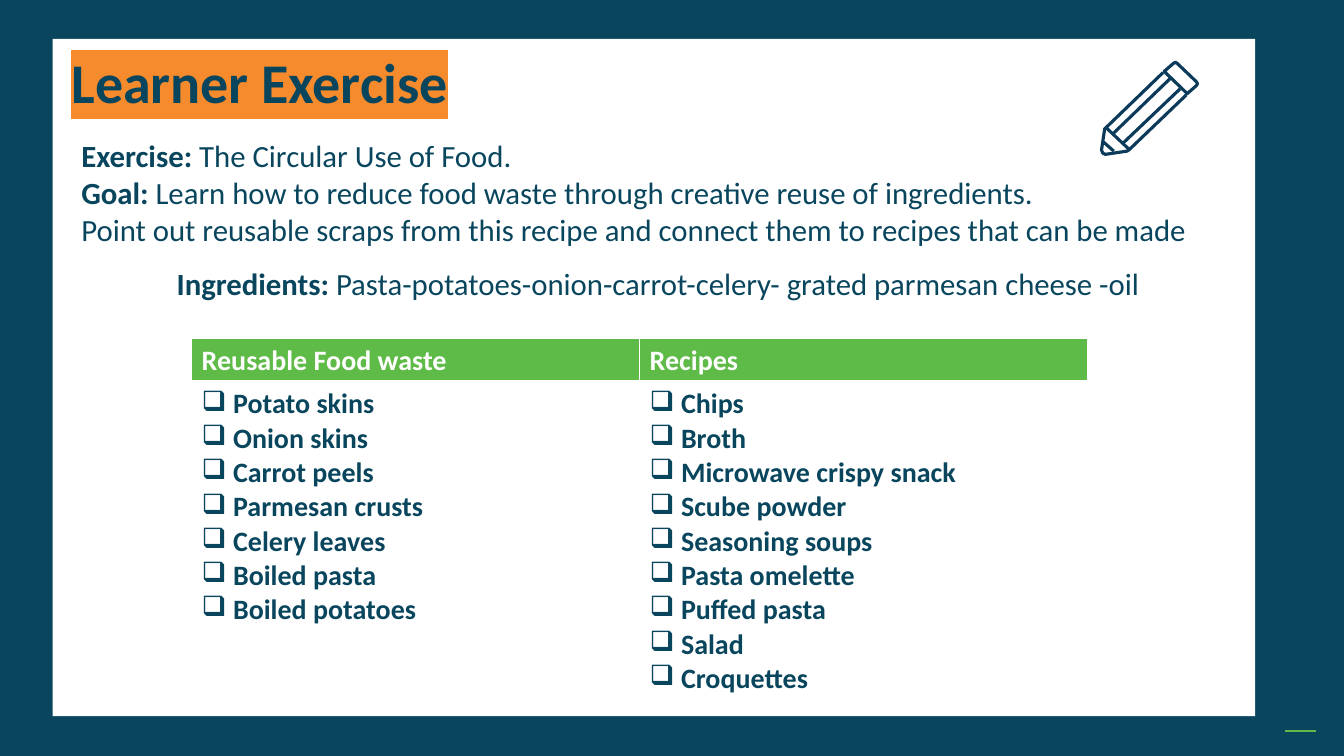
from lxml import etree
from pptx import Presentation
from pptx import util as u
from pptx.dml.color import RGBColor
from pptx.enum import shapes, text
from pptx.oxml import ns

NAVY = RGBColor(0x09, 0x46, 0x5E)
INK = RGBColor(0x0B, 0x3A, 0x5B)
GREEN = RGBColor(0x5F, 0xBB, 0x47)
LINE_GREEN = RGBColor(0x60, 0xBA, 0x47)
ORANGE = RGBColor(0xF6, 0x8B, 0x2D)
WHITE = RGBColor(0xFF, 0xFF, 0xFF)

INTRO = [
    ("Exercise: ", "The Circular Use of Food."),
    ("Goal: ", "Learn how to reduce food waste through creative reuse of ingredients."),
    ("", "Point out reusable scraps from this recipe and connect them to recipes that can be made"),
    ("Ingredients: ", "Pasta-potatoes-onion-carrot-celery- grated parmesan cheese -oil"),
]
COLUMNS = {
    "Reusable Food waste": [
        "Potato skins", "Onion skins", "Carrot peels", "Parmesan crusts",
        "Celery leaves", "Boiled pasta", "Boiled potatoes",
    ],
    "Recipes": [
        "Chips", "Broth", "Microwave crispy snack", "Scube powder", "Seasoning soups",
        "Pasta omelette", "Puffed pasta", "Salad", "Croquettes",
    ],
}
PENCIL_ERASER = [(3015, 206), (2967, 160), (2962, 157), (2957, 160), (2934, 180),
                 (2992, 236), (3015, 216), (3018, 211)]
PENCIL_STROKES = [
    [(2974, 224), (2830, 361)],
    [(2931, 183), (2786, 323), (2784, 325), (2776, 378), (2779, 386),
     (2786, 389), (2840, 381), (2845, 378), (2990, 239)],
    [(2804, 338), (2949, 198)],
    [(2807, 381), (2781, 358)],
    [(2789, 323), (2845, 376)],
]


def add_child(parent, tag, **attributes):
    return etree.SubElement(parent, ns.qn(tag), attributes)


def style_font(paragraph, size, color, bold=False):
    font = paragraph.font
    font.name = "Calibri"
    font.size = u.Pt(size)
    font.bold = bold
    font.color.rgb = color


def add_panel(page, left, top, width, height, color):
    panel = page.shapes.add_shape(
        shapes.MSO_SHAPE.RECTANGLE, u.Cm(left), u.Cm(top), u.Cm(width), u.Cm(height))
    panel.shadow.inherit = False
    panel.fill.solid()
    panel.fill.fore_color.rgb = color
    panel.line.fill.background()


def add_footer_line(page):
    line = page.shapes.add_connector(
        shapes.MSO_CONNECTOR.STRAIGHT, u.Cm(32.39), u.Cm(18.42), u.Cm(33.17), u.Cm(18.42))
    line.line.color.rgb = LINE_GREEN
    line.line.width = u.Pt(1)
    add_child(line._element.spPr, "a:effectLst")


def add_text_frame(page, left, top, width, height):
    box = page.shapes.add_textbox(u.Cm(left), u.Cm(top), u.Cm(width), u.Cm(height))
    box.text_frame.word_wrap = True
    return box.text_frame


def add_title(page):
    paragraph = add_text_frame(page, 1.55, 1.27, 27.91, 2.24).paragraphs[0]
    paragraph.line_spacing = 0.9
    style_font(paragraph, 40, NAVY, True)
    span = paragraph.add_run()
    span.text = "Learner Exercise"
    highlight = add_child(span._r.get_or_add_rPr(), "a:highlight")
    add_child(highlight, "a:srgbClr", val=str(ORANGE))


def add_intro(page):
    frame = add_text_frame(page, 1.8, 3.33, 29.57, 5.21)
    for index, (label, sentence) in enumerate(INTRO):
        paragraph = frame.add_paragraph() if index else frame.paragraphs[0]
        style_font(paragraph, 22, NAVY)
        if label:
            span = paragraph.add_run()
            span.text = label
            span.font.bold = True
        paragraph.add_run().text = sentence
    paragraph.alignment = text.PP_ALIGN.CENTER
    paragraph.space_before = u.Pt(12)


def set_borders(cell, bottom_width):
    properties = cell._tc.get_or_add_tcPr()
    widths = {"a:lnL": 1, "a:lnR": 1, "a:lnT": 1, "a:lnB": bottom_width}
    for index, (side, width) in enumerate(widths.items()):
        border = etree.Element(ns.qn(side), w=str(u.Pt(width)))
        add_child(add_child(border, "a:solidFill"), "a:srgbClr", val=str(WHITE))
        properties.insert(index, border)


def fill_checklist(cell, items):
    for index, item in enumerate(items):
        paragraph = cell.text_frame.add_paragraph() if index else cell.text_frame.paragraphs[0]
        properties = paragraph._p.get_or_add_pPr()
        properties.set("marL", str(u.Cm(0.79)))
        properties.set("indent", str(-u.Cm(0.79)))
        add_child(properties, "a:buChar", char="❑")
        style_font(paragraph, 20, NAVY, True)
        paragraph.add_run().text = item


def add_recipe_table(page):
    table = page.shapes.add_table(
        2, len(COLUMNS), u.Cm(4.83), u.Cm(8.53), u.Cm(22.58), u.Cm(8.96)).table
    table.rows[0].height = u.Cm(1.04)
    table.rows[1].height = u.Cm(7.92)
    for index, (heading, items) in enumerate(COLUMNS.items()):
        header, body = table.cell(0, index), table.cell(1, index)
        header.text = heading
        style_font(header.text_frame.paragraphs[0], 20, WHITE, True)
        header.fill.solid()
        header.fill.fore_color.rgb = GREEN
        set_borders(header, 3)
        fill_checklist(body, items)
        body.fill.background()
        set_borders(body, 1)


def add_stroke(group, points, close=False):
    builder = group.shapes.build_freeform(*points[0], scale=u.Cm(0.01))
    builder.add_line_segments(points[1:], close=close)
    stroke = builder.convert_to_shape()
    stroke.shadow.inherit = False
    stroke.fill.background()
    stroke.line.color.rgb = INK
    stroke.line.width = u.Pt(2.25)


def add_pencil(page):
    pencil = page.shapes.add_group_shape()
    add_stroke(pencil, PENCIL_ERASER, close=True)
    for points in PENCIL_STROKES:
        add_stroke(pencil, points)


def main():
    deck = Presentation()
    deck.slide_width, deck.slide_height = u.Cm(33.87), u.Cm(19.05)
    page = deck.slides.add_slide(deck.slide_layouts[6])
    add_panel(page, 0, 0, 33.87, 19.05, NAVY)
    add_panel(page, 1.33, 0.98, 30.3, 17.07, WHITE)
    add_footer_line(page)
    add_title(page)
    add_intro(page)
    add_recipe_table(page)
    add_pencil(page)
    deck.save("out.pptx")


if __name__ == "__main__":
    main()
